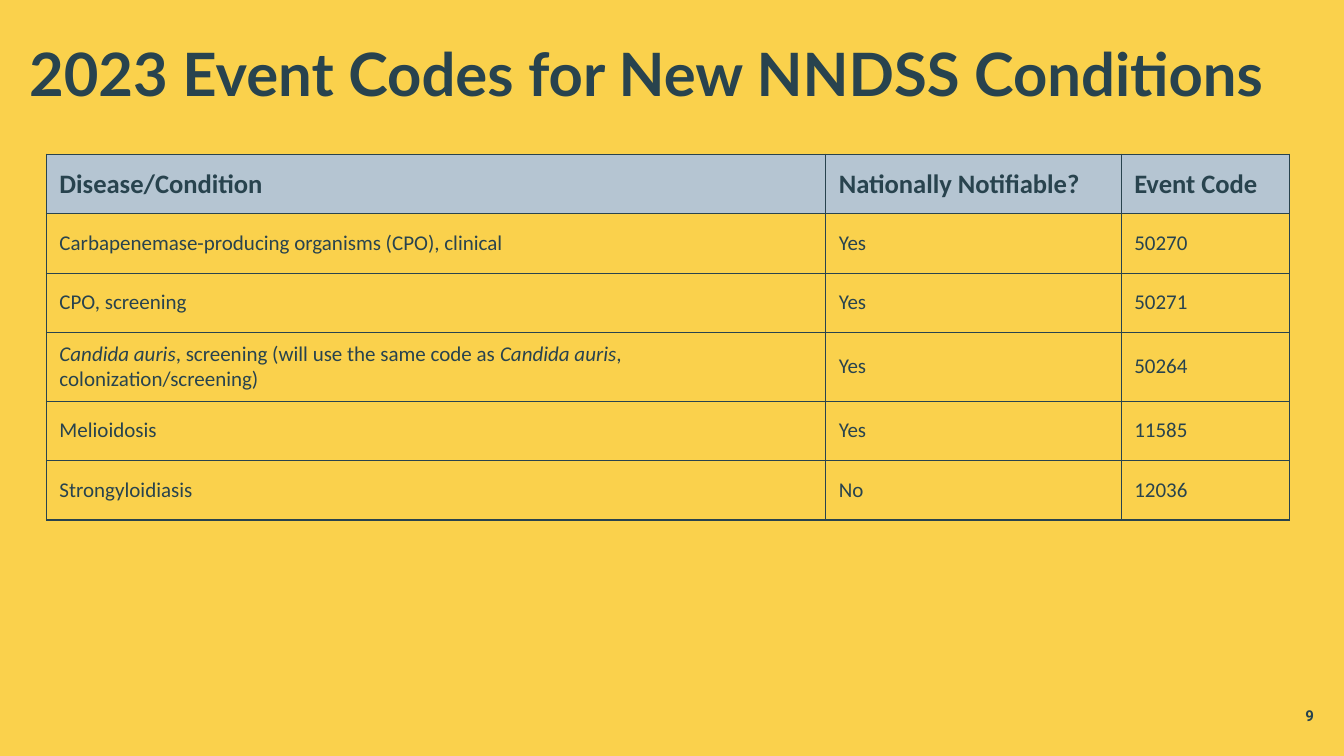
"""Build the slide of 2023 event codes for new NNDSS conditions."""
from lxml import etree
from pptx import Presentation
from pptx.dml.color import RGBColor
from pptx.enum.text import MSO_ANCHOR, PP_ALIGN
from pptx.oxml.ns import qn
from pptx.util import Inches, Pt

MIDDLE = MSO_ANCHOR.MIDDLE
LEFT, CENTER, RIGHT = PP_ALIGN.LEFT, PP_ALIGN.CENTER, PP_ALIGN.RIGHT
YELLOW = RGBColor(0xFA, 0xD1, 0x4C)
SLATE = RGBColor(0x28, 0x43, 0x4E)
MIST = RGBColor(0xB5, 0xC5, 0xD2)

TITLE = "2023 Event Codes for New NNDSS Conditions "
PAGE = "9"
ROWS = [
    ("Disease/Condition", "Nationally Notifiable?", "Event Code"),
    ("Carbapenemase-producing organisms (CPO), clinical", "Yes", "50270"),
    ("CPO, screening", "Yes", "50271"),
    ("*Candida auris*, screening (will use the same code as "
     "*Candida auris*, colonization/screening)", "Yes", "50264"),
    ("Melioidosis", "Yes", "11585"),
    ("Strongyloidiasis", "No", "12036"),
]
WIDTHS = (7.73, 2.93, 1.67)
HEIGHTS = (0.59, 0.59, 0.59, 0.68, 0.59, 0.59)


def write(para, text, font, size, bold, align):
    """Fill a paragraph; text between asterisks is italic."""
    para.alignment = align
    for index, part in enumerate(text.split("*")):
        if part:
            run = para.add_run()
            run.text = part
            run.font.name, run.font.size = font, Pt(size)
            run.font.bold, run.font.italic = bold, index % 2 == 1
            run.font.color.rgb = SLATE


def add_label(slide, box, text, font, size, align):
    """Add a bold text box."""
    frame = slide.shapes.add_textbox(*map(Inches, box)).text_frame
    frame.word_wrap = True
    frame.vertical_anchor = MIDDLE
    write(frame.paragraphs[0], text, font, size, True, align)


def add_border(cell):
    """Draw a thin line on each side of a cell."""
    props = cell._tc.get_or_add_tcPr()
    for side in ("a:lnL", "a:lnR", "a:lnT", "a:lnB"):
        line = etree.SubElement(props, qn(side), w=str(Pt(1)))
        fill = etree.SubElement(line, qn("a:solidFill"))
        etree.SubElement(fill, qn("a:srgbClr"), val=str(SLATE))


def add_codes(slide):
    """Add the table of event codes."""
    table = slide.shapes.add_table(
        len(ROWS), len(WIDTHS), Inches(0.46), Inches(1.53),
        Inches(sum(WIDTHS)), Inches(sum(HEIGHTS))).table
    table.first_row = table.horz_banding = False
    for col, width in zip(table.columns, WIDTHS):
        col.width = Inches(width)
    for r, (row, height) in enumerate(zip(ROWS, HEIGHTS)):
        table.rows[r].height = Inches(height)
        head = r == 0
        for c, text in enumerate(row):
            cell = table.cell(r, c)
            cell.vertical_anchor = MIDDLE
            cell.margin_left = cell.margin_right = Inches(0.13)
            cell.margin_top = cell.margin_bottom = Inches(0.07)
            add_border(cell)
            if head:
                cell.fill.solid()
                cell.fill.fore_color.rgb = MIST
            else:
                cell.fill.background()
            write(cell.text_frame.paragraphs[0], text, "Calibri",
                  19 if head else 15, head, LEFT)


def main():
    """Build and save the slide."""
    deck = Presentation()
    deck.slide_width, deck.slide_height = Inches(13.33), Inches(7.5)
    slide = deck.slides.add_slide(deck.slide_layouts[6])
    slide.background.fill.solid()
    slide.background.fill.fore_color.rgb = YELLOW
    add_label(slide, (0, 0.12, 12.97, 1.2), TITLE, "Lato", 42.7, CENTER)
    add_codes(slide)
    add_label(slide, (12.46, 6.9, 0.67, 0.4), PAGE, "Roboto", 10.7, RIGHT)
    deck.save("out.pptx")


if __name__ == "__main__":
    main()
